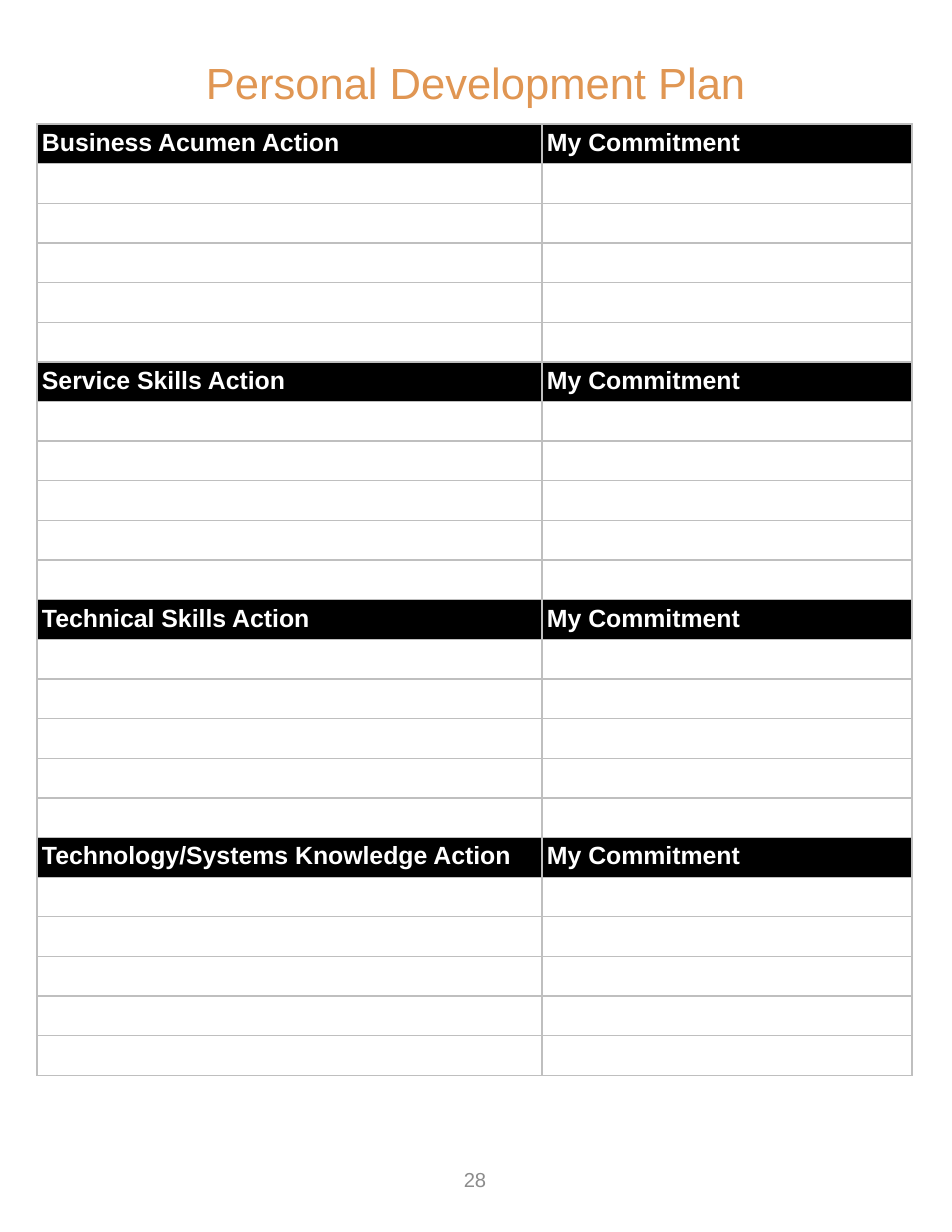
import pptx
import pptx.dml.color
import pptx.enum.text
import pptx.util
from lxml import etree

RGB = pptx.dml.color.RGBColor
BLACK = RGB(0x00, 0x00, 0x00)
WHITE = RGB(0xFF, 0xFF, 0xFF)
ORANGE = RGB(0xE0, 0x96, 0x53)
GRAY = RGB(0x8C, 0x8C, 0x8C)
RULE = RGB(0xBF, 0xBF, 0xBF)

NS = "http://schemas.openxmlformats.org/drawingml/2006/main"
TOPICS = ["Business Acumen", "Service Skills", "Technical Skills",
          "Technology/Systems Knowledge"]
BLOCK = 6  # one header row and five blank rows


def px(n):
    return pptx.util.Emu(round(n * 914400 / 112))


class Page:
    font = "Arial"

    def __init__(self, slide):
        self.slide = slide

    def style(self, para, size, color, bold=False):
        for run in para.runs:
            run.font.name = self.font
            run.font.size = pptx.util.Pt(size)
            run.font.color.rgb = color
            run.font.bold = bold

    def text(self, words, box, size, color):
        frame = self.slide.shapes.add_textbox(*map(px, box)).text_frame
        frame.word_wrap = True
        frame.vertical_anchor = pptx.enum.text.MSO_ANCHOR.MIDDLE
        frame.margin_left = frame.margin_right = px(12)
        frame.margin_top = frame.margin_bottom = px(6)
        frame.text = words
        para = frame.paragraphs[0]
        para.alignment = pptx.enum.text.PP_ALIGN.CENTER
        self.style(para, size, color)

    def border(self, cell):
        props = cell._tc.get_or_add_tcPr()
        for side in ("lnL", "lnR", "lnT", "lnB"):
            line = etree.SubElement(props, f"{{{NS}}}{side}", w="12700")
            fill = etree.SubElement(line, f"{{{NS}}}solidFill")
            etree.SubElement(fill, f"{{{NS}}}srgbClr", val=str(RULE))

    def cell(self, cell, words):
        self.border(cell)
        cell.margin_left = cell.margin_right = px(5)
        # Blank cells need no padding, so every row keeps its height
        cell.margin_top = cell.margin_bottom = px(5 if words else 0)
        if words:
            cell.fill.solid()
            cell.fill.fore_color.rgb = BLACK
            cell.text = words
            self.style(cell.text_frame.paragraphs[0], 16, WHITE, True)
        else:
            cell.fill.background()

    def table(self, rows, box, widths):
        grid = self.slide.shapes.add_table(
            len(rows), len(widths), *map(px, box)).table
        grid.first_row = grid.horz_banding = False
        for col, width in zip(grid.columns, widths):
            col.width = px(width)
        for r, row in enumerate(rows):
            for c, words in enumerate(row):
                self.cell(grid.cell(r, c), words)


def main():
    deck = pptx.Presentation()
    deck.slide_width, deck.slide_height = px(952), px(1232)
    page = Page(deck.slides.add_slide(deck.slide_layouts[6]))

    # Action table, one block per topic
    rows = []
    for topic in TOPICS:
        rows.append((f"{topic} Action", "My Commitment"))
        rows += [("", "")] * (BLOCK - 1)
    page.table(rows, (37, 124, 875, 952), (505, 370))

    # Title and page number
    page.text("Personal Development Plan", (47, 43, 857, 78), 28, ORANGE)
    page.text("28", (364, 1146, 222, 66), 13, GRAY)

    deck.save("out.pptx")


if __name__ == "__main__":
    main()
